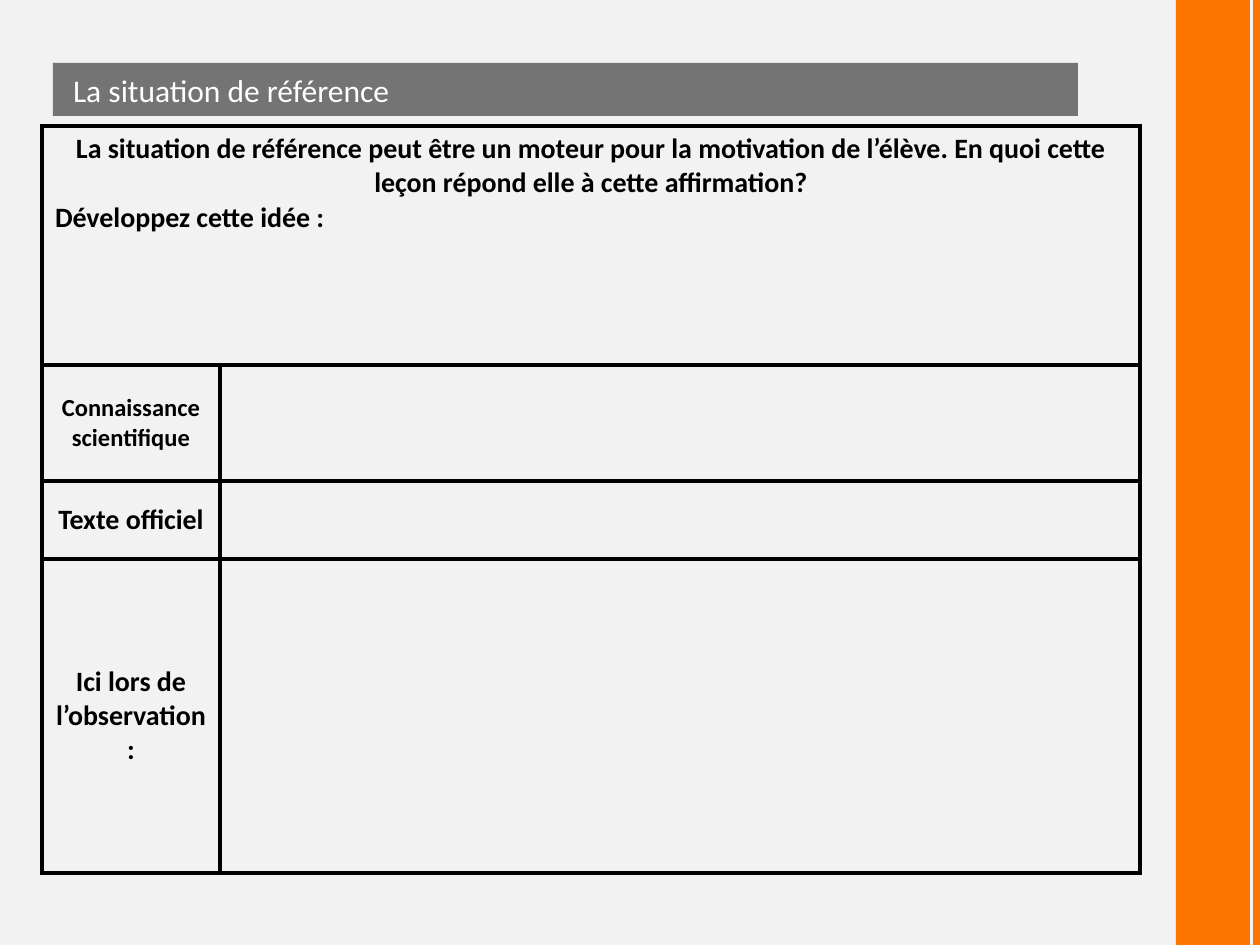
from lxml import etree
from pptx import Presentation
from pptx.dml.color import RGBColor
from pptx.enum.shapes import MSO_CONNECTOR, MSO_SHAPE
from pptx.enum.text import MSO_ANCHOR, PP_ALIGN
from pptx.oxml.ns import qn
from pptx.util import Pt

RECTANGLE, STRAIGHT = MSO_SHAPE.RECTANGLE, MSO_CONNECTOR.STRAIGHT
LEFT, CENTER = PP_ALIGN.LEFT, PP_ALIGN.CENTER
TOP, MIDDLE = MSO_ANCHOR.TOP, MSO_ANCHOR.MIDDLE

COLORS = {"background": "F2F2F2", "accent": "FC7500", "banner": "0D0D0D",
          "title": "FFFFFF", "text": "000000", "border": "000000"}
FONT = "Calibri"
TITLE = " La situation de référence"
QUESTION = [
    ("La situation de référence peut être un moteur pour la motivation de l’élève. "
     "En quoi cette leçon répond elle à cette affirmation?", CENTER),
    ("Développez cette idée :", LEFT),
]
ROW_LABELS = [("Connaissance scientifique", 14), ("Texte officiel", 16),
              ("Ici lors de l’observation:", 16)]

PX = 914400 // 126
SLIDE_WIDTH, SLIDE_HEIGHT = 1260, 945
STRIPE = (1176, 0, 74, SLIDE_HEIGHT)
EDGE_X = 1257
BANNER = (53, 63, 1025, 53)
TABLE_LEFT, TABLE_TOP = 42, 126
COLUMN_WIDTHS = [178, 920]
ROW_HEIGHTS = [239, 116, 78, 314]
MARGINS = {"margin_left": 13, "margin_right": 13, "margin_top": 6, "margin_bottom": 6}
BORDER_SIDES = ("a:lnL", "a:lnR", "a:lnT", "a:lnB")
BORDER_WIDTH = 2.25


def rgb(name):
    return RGBColor.from_string(COLORS[name])


def add_block(slide, box, color):
    shape = slide.shapes.add_shape(RECTANGLE, *(value * PX for value in box))
    shape.shadow.inherit = False
    shape.fill.solid()
    shape.fill.fore_color.rgb = rgb(color)
    shape.line.fill.background()
    return shape


def set_margins(target):
    for name, value in MARGINS.items():
        setattr(target, name, value * PX)


def write(paragraph, text, size, color="text", align=LEFT, bold=True):
    paragraph.alignment = align
    run = paragraph.add_run()
    run.text = text
    for name, value in {"name": FONT, "size": Pt(size), "bold": bold}.items():
        setattr(run.font, name, value)
    run.font.color.rgb = rgb(color)


def set_borders(cell):
    properties = cell._tc.get_or_add_tcPr()
    for index, side in enumerate(BORDER_SIDES):
        line = etree.Element(qn(side), w=str(Pt(BORDER_WIDTH)))
        fill = etree.SubElement(line, qn("a:solidFill"))
        etree.SubElement(fill, qn("a:srgbClr"), val=COLORS["border"])
        properties.insert(index, line)


def add_decoration(slide):
    add_block(slide, STRIPE, "accent")
    edge = slide.shapes.add_connector(
        STRAIGHT, EDGE_X * PX, 0, EDGE_X * PX, SLIDE_HEIGHT * PX)
    edge.line.color.rgb = rgb("accent")
    edge.line.width = Pt(4)
    etree.SubElement(edge._element.spPr, qn("a:effectLst"))


def add_banner(slide):
    banner = add_block(slide, BANNER, "banner")
    color = banner._element.spPr.find(".//" + qn("a:srgbClr"))
    etree.SubElement(color, qn("a:alpha"), val="55000")
    frame = banner.text_frame
    frame.word_wrap = True
    frame.vertical_anchor = MIDDLE
    set_margins(frame)
    write(frame.paragraphs[0], TITLE, 18, "title", bold=False)


def add_grid(slide):
    table = slide.shapes.add_table(
        len(ROW_HEIGHTS), len(COLUMN_WIDTHS), TABLE_LEFT * PX, TABLE_TOP * PX,
        sum(COLUMN_WIDTHS) * PX, sum(ROW_HEIGHTS) * PX).table
    table.first_row = table.horz_banding = False
    for column, width in zip(table.columns, COLUMN_WIDTHS):
        column.width = width * PX
    for row, height in zip(table.rows, ROW_HEIGHTS):
        row.height = height * PX
    for cell in table.iter_cells():
        cell.fill.background()
        cell.vertical_anchor = MIDDLE
        set_margins(cell)
        set_borders(cell)

    question = table.cell(0, 0)
    question.merge(table.cell(0, 1))
    question.vertical_anchor = TOP
    frame = question.text_frame
    for index, (text, align) in enumerate(QUESTION):
        paragraph = frame.add_paragraph() if index else frame.paragraphs[0]
        write(paragraph, text, 16, align=align)
    for row, (text, size) in enumerate(ROW_LABELS, start=1):
        write(table.cell(row, 0).text_frame.paragraphs[0], text, size, align=CENTER)


def main():
    presentation = Presentation()
    presentation.slide_width = SLIDE_WIDTH * PX
    presentation.slide_height = SLIDE_HEIGHT * PX
    slide = presentation.slides.add_slide(presentation.slide_layouts[6])
    slide.background.fill.solid()
    slide.background.fill.fore_color.rgb = rgb("background")
    add_decoration(slide)
    add_banner(slide)
    add_grid(slide)
    presentation.save("out.pptx")


if __name__ == "__main__":
    main()
